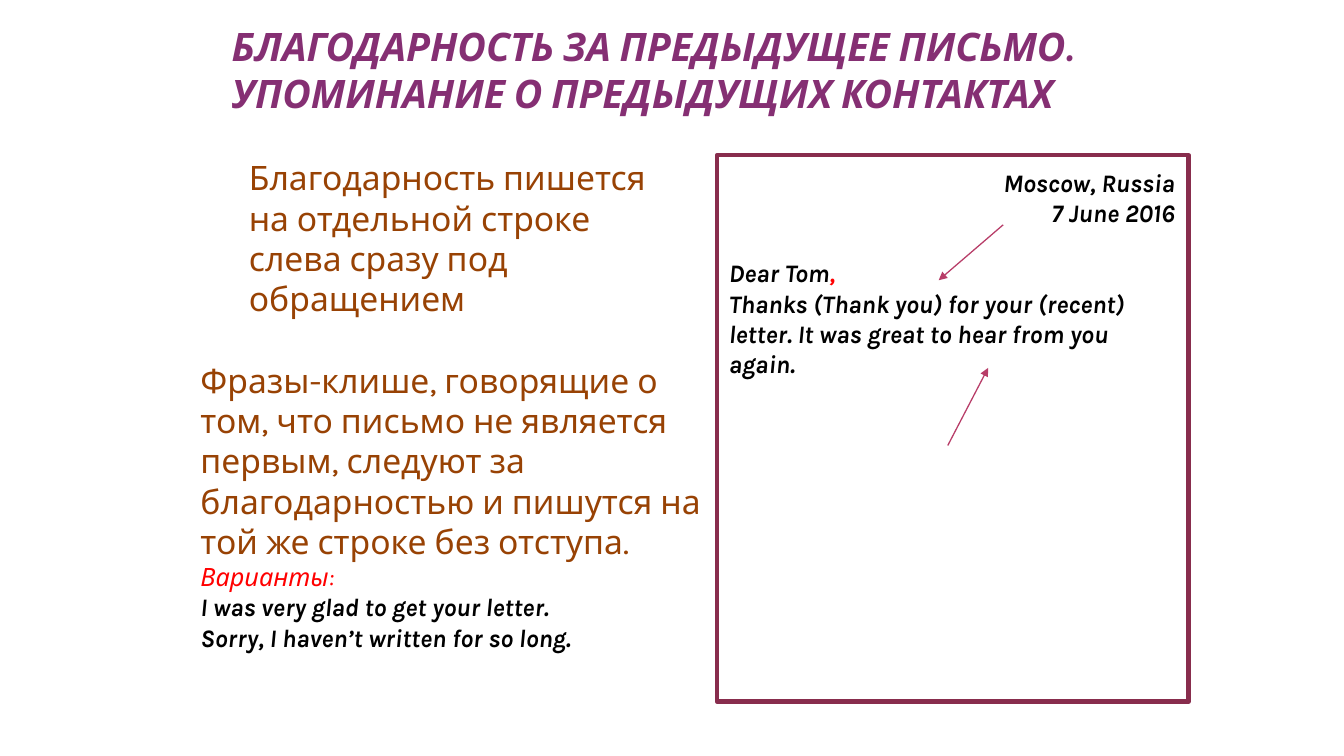
import pptx
import pptx.util
import pptx.dml.color
import pptx.enum.shapes
import pptx.enum.text
import pptx.oxml
import pptx.oxml.ns

Inches = pptx.util.Inches
Pt = pptx.util.Pt
RIGHT = pptx.enum.text.PP_ALIGN.RIGHT

COLORS = {
    "title": "852F73",
    "rule": "984204",
    "accent": "FF0000",
    "letter": "000000",
    "frame": "882D4D",
    "arrow": "B83D68",
}


def rgb(name):
    return pptx.dml.color.RGBColor.from_string(COLORS[name])


class LetterSlide:
    """Draws the elements of a letter-writing lesson slide in one style."""

    styles = {
        "title": {"size": Pt(28), "bold": True, "italic": True},
        "rule": {"size": Pt(24), "bold": False, "italic": False},
        "variants": {"size": Pt(18), "bold": False, "italic": True},
        "letter": {"size": Pt(18), "bold": True, "italic": True},
    }

    def __init__(self, deck):
        self.slide = deck.slides.add_slide(deck.slide_layouts[6])

    def text(self, left, top, width, height, paragraphs):
        box = self.slide.shapes.add_textbox(*map(Inches, (left, top, width, height)))
        frame = box.text_frame
        frame.word_wrap = True
        for index, (spans, layout) in enumerate(paragraphs):
            para = frame.paragraphs[0] if index == 0 else frame.add_paragraph()
            for name, value in layout.items():
                setattr(para, name, value)
            for words, style, color in spans:
                span = para.add_run()
                span.text = words
                span.font.name = "Karla"
                span.font.color.rgb = rgb(color)
                for name, value in self.styles[style].items():
                    setattr(span.font, name, value)

    def frame(self, left, top, width, height):
        sheet = self.slide.shapes.add_shape(
            pptx.enum.shapes.MSO_SHAPE.RECTANGLE,
            *map(Inches, (left, top, width, height)))
        sheet.shadow.inherit = False
        sheet.fill.background()
        sheet.line.color.rgb = rgb("frame")
        sheet.line.width = Pt(3.15)

    def arrow(self, *ends):
        line = self.slide.shapes.add_connector(
            pptx.enum.shapes.MSO_CONNECTOR.STRAIGHT, *map(Inches, ends))
        line.line.color.rgb = rgb("arrow")
        line.line.width = Pt(0.9)
        outline = line.line._get_or_add_ln()
        head = pptx.oxml.parse_xml(
            f'<a:tailEnd {pptx.oxml.ns.nsdecls("a")} type="triangle"/>')
        outline.append(head)
        effects = pptx.oxml.parse_xml(
            f'<a:effectLst {pptx.oxml.ns.nsdecls("a")}/>')
        outline.addnext(effects)


def line(words, style, color=None, **layout):
    return [(words, style, color or style)], layout


def main():
    deck = pptx.Presentation()
    deck.slide_width = Inches(13.33)
    deck.slide_height = Inches(7.5)
    page = LetterSlide(deck)

    page.text(2.2, 0.17, 9.99, 1.04, [
        line("БЛАГОДАРНОСТЬ ЗА ПРЕДЫДУЩЕЕ ПИСЬМО.", "title"),
        line("УПОМИНАНИЕ О ПРЕДЫДУЩИХ КОНТАКТАХ", "title"),
    ])
    page.frame(7.11, 1.54, 4.68, 5.42)
    greeting = [("Dear Tom", "letter", "letter"), (",", "letter", "accent")]
    page.text(7.13, 1.61, 4.62, 2.22, [
        line("Moscow, Russia", "letter", alignment=RIGHT),
        line("7 June 2016", "letter", alignment=RIGHT),
        (greeting, {"space_before": Pt(21.5)}),
        line("Thanks (Thank you) for your (recent) letter. "
             "It was great to hear from you again.", "letter"),
    ])
    page.text(2.37, 1.51, 4.32, 1.72, [
        line("Благодарность пишется на отдельной строке слева "
             "сразу под обращением", "rule"),
    ])
    page.arrow(9.95, 2.23, 9.31, 2.78)
    page.text(1.89, 3.52, 5.27, 3.43, [
        line("Фразы-клише, говорящие о том, что письмо не является первым, "
             "следуют за благодарностью и пишутся на той же строке "
             "без отступа.", "rule"),
        line("Варианты:", "variants", "accent"),
        line("I was very glad to get your letter.", "letter"),
        line("Sorry, I haven’t written for so long.", "letter"),
    ])
    page.arrow(9.4, 4.42, 9.8, 3.65)

    deck.save("out.pptx")


if __name__ == "__main__":
    main()
